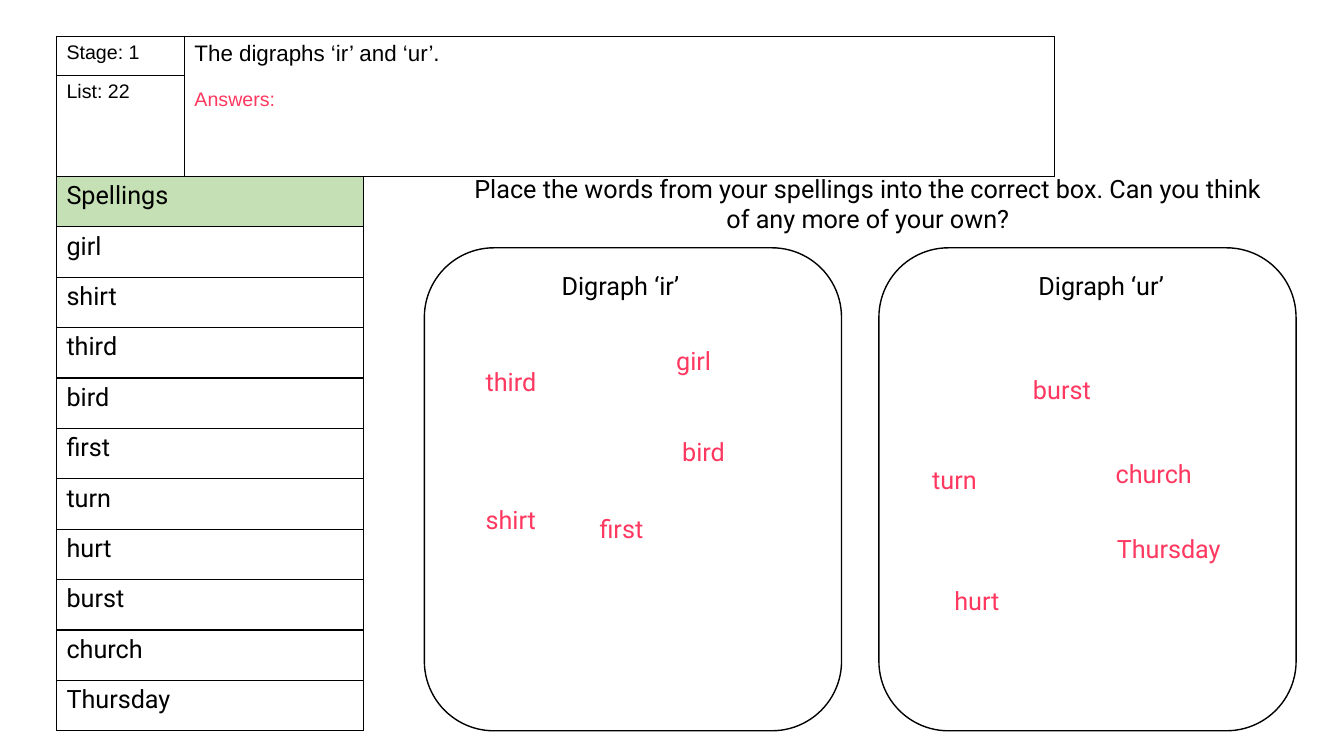
from typing import NamedTuple

from lxml.etree import SubElement
from pptx import Presentation
from pptx.dml.color import RGBColor
from pptx.enum.shapes import MSO_SHAPE as Preset
from pptx.enum.text import MSO_AUTO_SIZE as AutoSize, PP_ALIGN as Align
from pptx.oxml.ns import qn
from pptx.util import Pt

BLACK = RGBColor(0x00, 0x00, 0x00)
WHITE = RGBColor(0xFF, 0xFF, 0xFF)
ANSWER_PINK = RGBColor(0xFF, 0x38, 0x60)
HEADING_GREEN = RGBColor(0xC5, 0xE0, 0xB4)

LEFT = 40.3
SPELLINGS_TOP = 126
SPELLING_ROW = 36
LINE_HEIGHT = 29
BOX_TOP, BOX_WIDTH, BOX_HEIGHT = 177, 298, 345


class Label(NamedTuple):
    text: str
    left: float
    top: float
    width: float
    height: float = LINE_HEIGHT


class Word(NamedTuple):
    text: str
    left: float
    top: float
    width: float


class DigraphBox(NamedTuple):
    left: float
    title: Label
    words: list[Word]


SPELLINGS = ["girl", "shirt", "third", "bird", "first",
             "turn", "hurt", "burst", "church", "Thursday"]

INSTRUCTION = Label("Place the words from your spellings into the correct box. "
                    "Can you think of any more of your own?", 322.6, 120.2, 594.7, 51)

DIGRAPH_BOXES = [
    DigraphBox(303.1, Label("Digraph ‘ir’", 329.8, 189.4, 226.8), [
        Word("third", 339.8, 257.8, 59),
        Word("girl", 475.9, 243.4, 44.6),
        Word("bird", 480.2, 308.2, 50.4),
        Word("first", 421.2, 362.9, 55.4),
        Word("shirt", 339.8, 356.4, 56.9),
    ]),
    DigraphBox(627.8, Label("Digraph ‘ur’", 673.2, 189.4, 226.8), [
        Word("turn", 658.8, 328.3, 54.7),
        Word("hurt", 674.6, 414.7, 54.7),
        Word("burst", 730.8, 263.5, 64.8),
        Word("church", 789.8, 324, 77),
        Word("Thursday", 790.6, 377.3, 104.4),
    ]),
]


def style_text(paragraph, size: float, font: str = "Roboto",
               color: RGBColor = BLACK) -> None:
    for run in paragraph.runs:
        run.font.size = Pt(size)
        run.font.name = font
        run.font.color.rgb = color


def style_cell(cell, fill: RGBColor | None = None) -> None:
    """Give a cell its fill and a thin black border on all sides."""
    if fill is None:
        cell.fill.background()
    else:
        cell.fill.solid()
        cell.fill.fore_color.rgb = fill
    properties = cell._tc.get_or_add_tcPr()
    for order, side in enumerate(("a:lnL", "a:lnR", "a:lnT", "a:lnB")):
        border = SubElement(properties, qn(side), w=str(Pt(1)))
        solid = SubElement(border, qn("a:solidFill"))
        SubElement(solid, qn("a:srgbClr"), val=str(BLACK))
        properties.insert(order, border)


def add_grid(slide, top: float, columns: list[float], rows: list[float]):
    table = slide.shapes.add_table(len(rows), len(columns), Pt(LEFT), Pt(top),
                                   Pt(sum(columns)), Pt(sum(rows))).table
    table.first_row = table.horz_banding = False
    for column, width in zip(table.columns, columns):
        column.width = Pt(width)
    for row, height in zip(table.rows, rows):
        row.height = Pt(height)
    return table


def add_header(slide) -> None:
    header = add_grid(slide, 26, [91.4, 621.4], [28, 72])
    for cell in header.iter_cells():
        style_cell(cell)
    header.cell(0, 1).merge(header.cell(1, 1))
    for row, text in enumerate(("Stage: 1", "List: 22")):
        stage_cell = header.cell(row, 0)
        stage_cell.text_frame.text = text
        style_text(stage_cell.text_frame.paragraphs[0], 14, "Arial")

    topic_cell = header.cell(0, 1)
    topic_cell.text_frame.text = "The digraphs ‘ir’ and ‘ur’."
    style_text(topic_cell.text_frame.paragraphs[0], 16, "Arial")
    answers = topic_cell.text_frame.add_paragraph()
    answers.text = "Answers:"
    answers.space_before = Pt(16)
    style_text(answers, 14, "Arial", ANSWER_PINK)


def add_spellings(slide) -> None:
    entries = ["Spellings", *SPELLINGS]
    table = add_grid(slide, SPELLINGS_TOP, [219.6], [SPELLING_ROW] * len(entries))
    for row, entry in enumerate(entries):
        cell = table.cell(row, 0)
        style_cell(cell, HEADING_GREEN if row == 0 else None)
        cell.text_frame.text = entry
        style_text(cell.text_frame.paragraphs[0], 18)


def add_label(slide, label: Label) -> None:
    frame = slide.shapes.add_textbox(Pt(label.left), Pt(label.top), Pt(label.width),
                                     Pt(label.height)).text_frame
    frame.word_wrap = True
    frame.auto_size = AutoSize.SHAPE_TO_FIT_TEXT
    frame.text = label.text
    frame.paragraphs[0].alignment = Align.CENTER
    style_text(frame.paragraphs[0], 18)


def add_word(slide, word: Word) -> None:
    frame = slide.shapes.add_textbox(Pt(word.left), Pt(word.top), Pt(word.width),
                                     Pt(LINE_HEIGHT)).text_frame
    frame.word_wrap = False
    frame.auto_size = AutoSize.SHAPE_TO_FIT_TEXT
    frame.text = word.text
    style_text(frame.paragraphs[0], 18, color=ANSWER_PINK)


def add_digraph_box(slide, box: DigraphBox) -> None:
    outline = slide.shapes.add_shape(Preset.ROUNDED_RECTANGLE, Pt(box.left), Pt(BOX_TOP),
                                     Pt(BOX_WIDTH), Pt(BOX_HEIGHT))
    outline.shadow.inherit = False
    outline.fill.solid()
    outline.fill.fore_color.rgb = WHITE
    outline.line.color.rgb = BLACK
    outline.line.width = Pt(1)
    add_label(slide, box.title)
    for word in box.words:
        add_word(slide, word)


def main() -> None:
    deck = Presentation()
    deck.slide_width, deck.slide_height = Pt(960), Pt(540)
    slide = deck.slides.add_slide(deck.slide_layouts[6])

    # Tables on the left and along the top
    add_spellings(slide)
    add_header(slide)

    # Sorting activity with its answers
    for box in DIGRAPH_BOXES:
        add_digraph_box(slide, box)
    add_label(slide, INSTRUCTION)

    deck.save("out.pptx")


if __name__ == "__main__":
    main()
